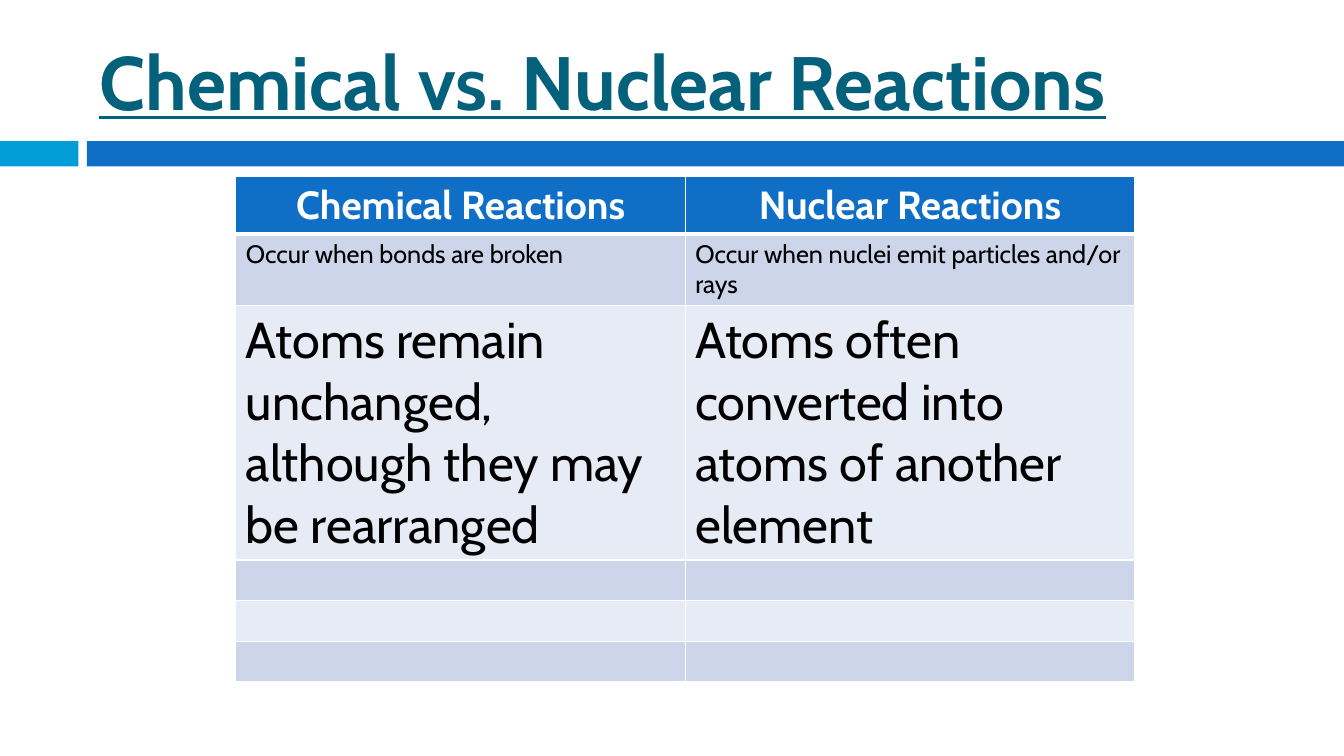
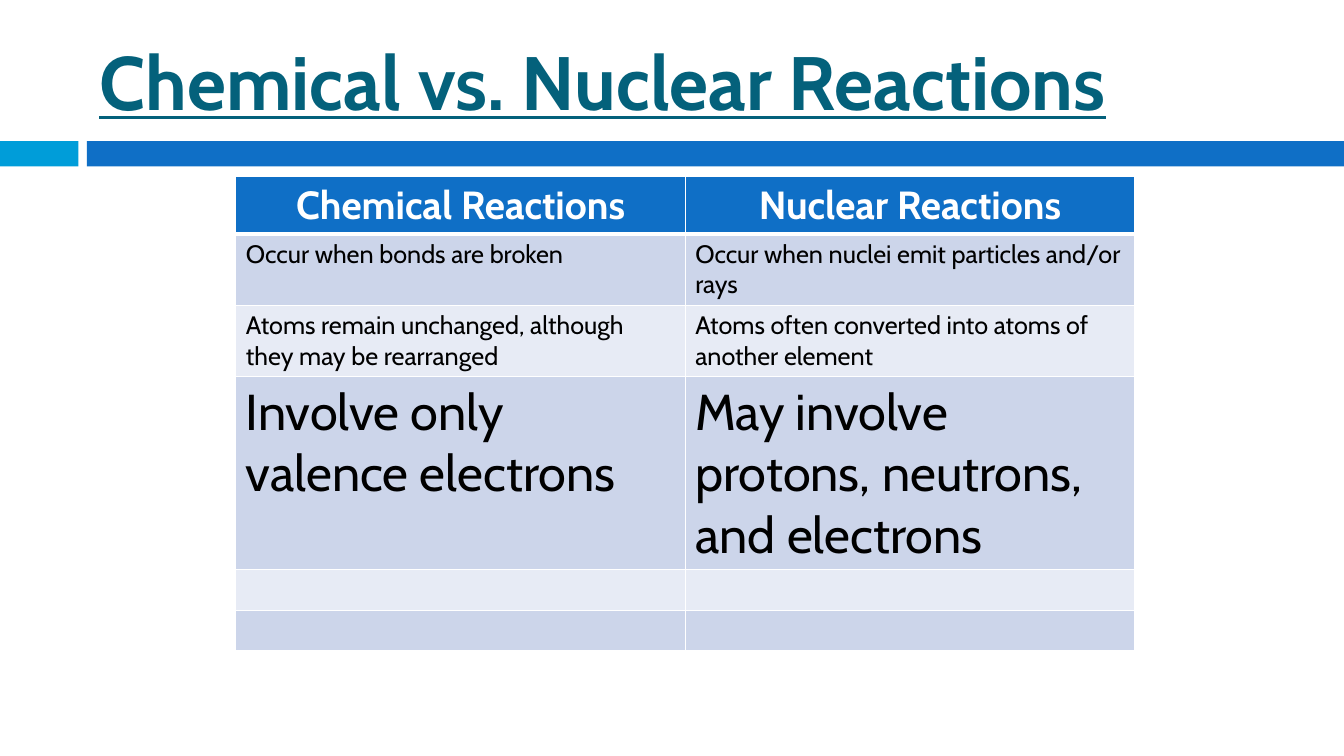
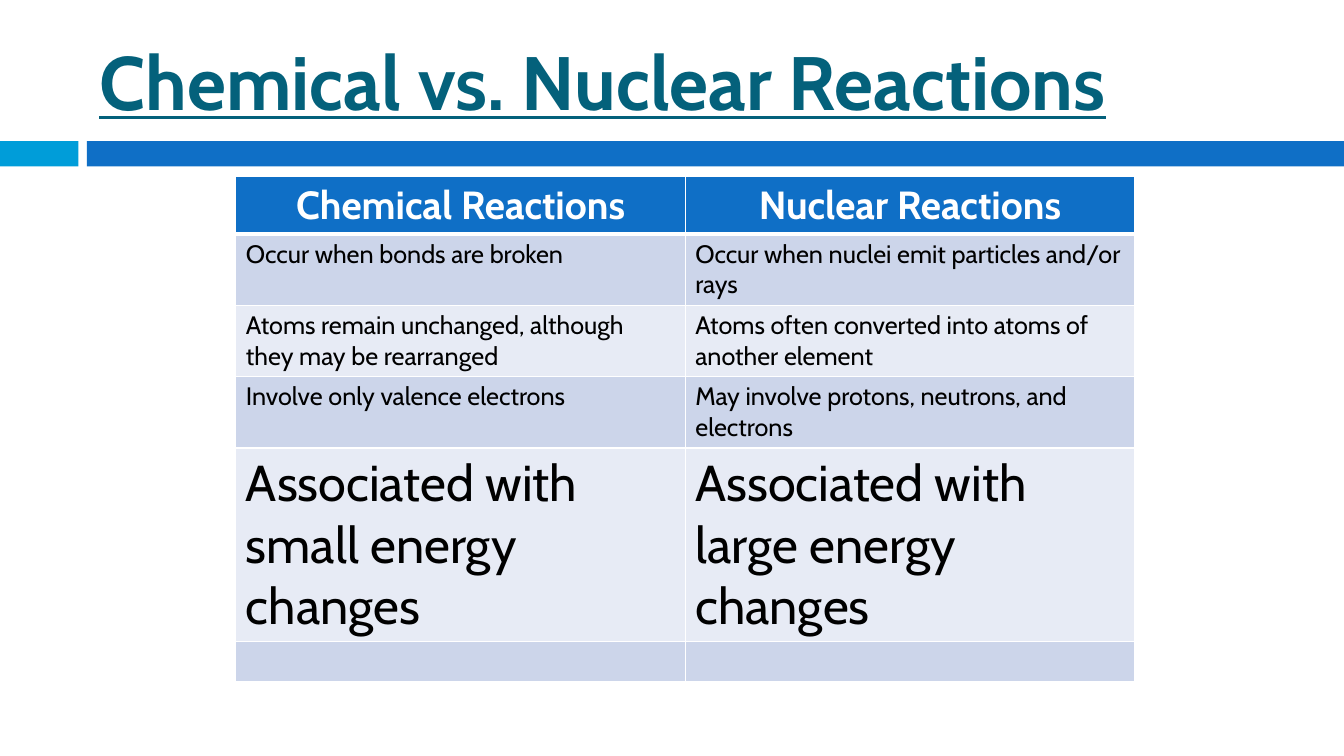
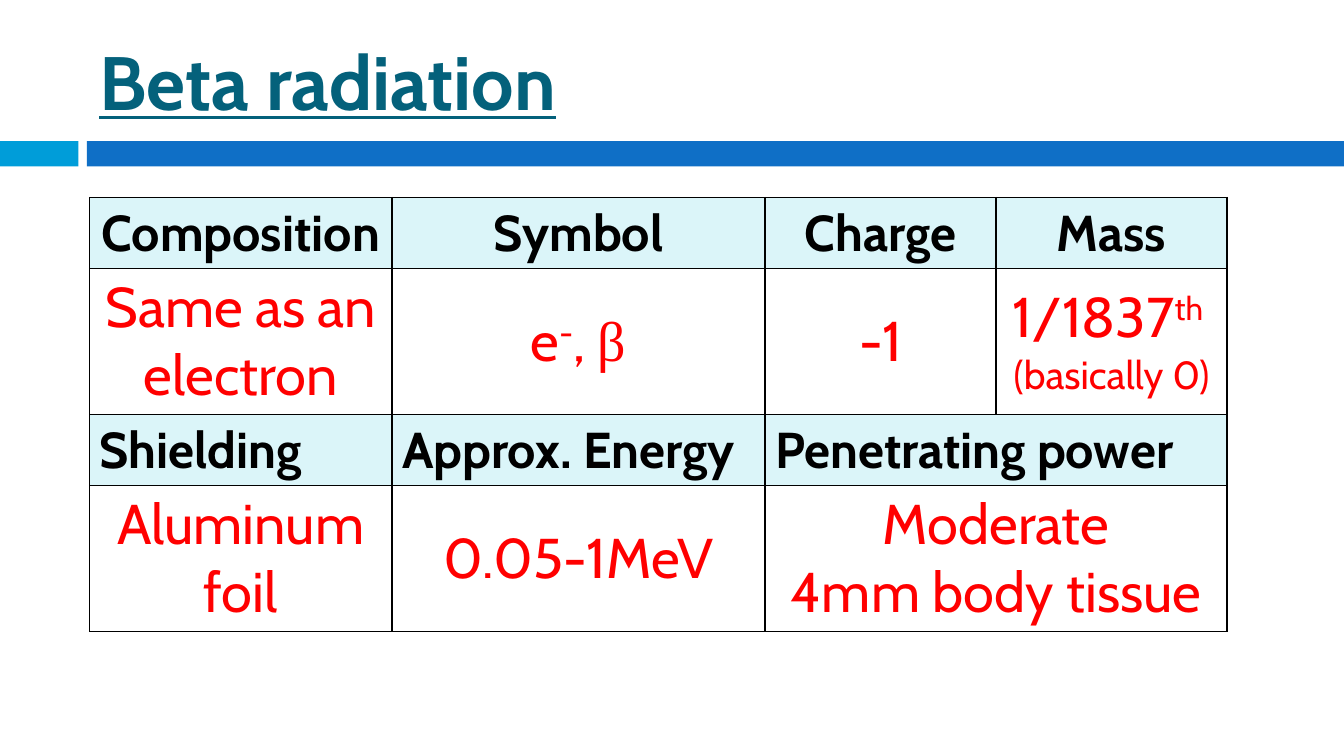
from lxml import etree
from pptx import Presentation
from pptx.dml.color import RGBColor
from pptx.enum import shapes, text
from pptx.oxml import ns
from pptx.util import Pt

FONT = "Cabin"
BLUE, SKY, TEAL = "0F6FC6", "009DD9", "04617B"
WHITE, BLACK, RED = "FFFFFF", "000000", "FF0000"
BANDS = ["CCD5EA", "E7EBF5"]
PALE = "DBF5F9"
CENTER = text.PP_ALIGN.CENTER
MIDDLE = text.MSO_ANCHOR.MIDDLE


def write_text(frame, content, size=18, color=BLACK, bold=False, underline=False, align=None):
    """Content is a string, or a list of paragraphs made of (text, overrides) runs."""
    if isinstance(content, str):
        content = [[(line, {})] for line in content.split("\n")]
    for index, runs in enumerate(content):
        paragraph = frame.add_paragraph() if index else frame.paragraphs[0]
        paragraph.alignment = align
        for words, overrides in runs:
            run = paragraph.add_run()
            run.text = words
            run.font.name = overrides.get("font", FONT)
            run.font.size = Pt(overrides.get("size", size))
            run.font.bold = bold
            run.font.underline = underline
            run.font.color.rgb = RGBColor.from_string(color)
            if overrides.get("raised"):
                run.font._element.set("baseline", "30000")


def style_cell(cell, fill, border, top=1, bottom=1):
    cell.fill.solid()
    cell.fill.fore_color.rgb = RGBColor.from_string(fill)
    properties = cell._tc.get_or_add_tcPr()
    for index, (side, width) in enumerate([("L", 1), ("R", 1), ("T", top), ("B", bottom)]):
        line = etree.Element(ns.qn(f"a:ln{side}"), w=str(Pt(width)))
        solid = etree.SubElement(line, ns.qn("a:solidFill"))
        etree.SubElement(solid, ns.qn("a:srgbClr"), val=border)
        properties.insert(index, line)


comparisons = [
    ("Occur when bonds are broken", "Occur when nuclei emit particles and/or rays"),
    ("Atoms remain unchanged, although they may be rearranged",
     "Atoms often converted into atoms of another element"),
    ("Involve only valence electrons", "May involve protons, neutrons, and electrons"),
    ("Associated with small energy changes", "Associated with large energy changes"),
]
BODY_ROWS = 5

# A row is (height, fill, cell texts, text format); None continues the cell to its left.
pages = []
for newest, height in [(1, 182), (2, 138), (3, 138)]:
    rows = [(41, BLUE, ("Chemical Reactions", "Nuclear Reactions"),
             dict(size=28, color=WHITE, bold=True, align=CENTER))]
    for index in range(BODY_ROWS):
        band = BANDS[index % 2]
        if index > newest:
            rows.append((29, band, ("", ""), {}))
        elif index == newest:
            rows.append((height, band, comparisons[index], dict(size=36)))
        else:
            rows.append((51, band, comparisons[index], dict(size=18)))
    pages.append(dict(title="Chemical vs. Nuclear Reactions", left=168.5, top=126,
                      columns=[321, 321], border=WHITE, rule=3, rows=rows))

heading = dict(size=36, bold=True)
answer = dict(size=40, color=RED, align=CENTER)
symbol = [[("e", {}), ("-", dict(raised=True)), (", ", {}), ("β", dict(font="Times New Roman"))]]
mass = [[("1/1837", {}), ("th ", dict(raised=True))], [("(basically 0)", dict(size=28))]]
pages.append(dict(
    title="Beta radiation", left=64, top=141, columns=[216, 266.5, 165, 165],
    border=BLACK, rule=1,
    rows=[
        (51, PALE, ("Composition", "Symbol", "Charge", "Mass"), dict(heading, align=CENTER)),
        (104, WHITE, ("Same as an electron", symbol, "-1", mass), answer),
        (51, PALE, ("Shielding", "Approx. Energy", "Penetrating power", None), heading),
        (104, WHITE, ("Aluminum foil", "0.05-1MeV", "Moderate\n4mm body tissue", None), answer),
    ]))

presentation = Presentation()
presentation.slide_width, presentation.slide_height = Pt(960), Pt(540)

for page in pages:
    slide = presentation.slides.add_slide(presentation.slide_layouts[6])

    for left, width, color in [(0, 56, SKY), (62, 898, BLUE)]:
        band = slide.shapes.add_shape(shapes.MSO_SHAPE.RECTANGLE, Pt(left), Pt(100.8), Pt(width), Pt(18))
        band.shadow.inherit = False
        band.fill.solid()
        band.fill.fore_color.rgb = RGBColor.from_string(color)
        band.line.fill.background()

    title = slide.shapes.add_textbox(Pt(64), Pt(18), Pt(856), Pt(78)).text_frame
    title.word_wrap = True
    title.vertical_anchor = MIDDLE
    write_text(title, page["title"], size=54, color=TEAL, bold=True, underline=True)

    rows, columns = page["rows"], page["columns"]
    table = slide.shapes.add_table(
        len(rows), len(columns), Pt(page["left"]), Pt(page["top"]),
        Pt(sum(columns)), Pt(sum(row[0] for row in rows))).table
    table.first_row = table.horz_banding = False
    for column, width in zip(table.columns, columns):
        column.width = Pt(width)
    for row_index, (height, fill, contents, style) in enumerate(rows):
        table.rows[row_index].height = Pt(height)
        for column_index, content in enumerate(contents):
            cell = table.cell(row_index, column_index)
            style_cell(cell, fill, page["border"],
                       top=page["rule"] if row_index == 1 else 1,
                       bottom=page["rule"] if row_index == 0 else 1)
            if content is None:
                table.cell(row_index, column_index - 1).merge(cell)
            elif content:
                write_text(cell.text_frame, content, **style)
                if style is answer:
                    cell.vertical_anchor = MIDDLE

presentation.save("out.pptx")
